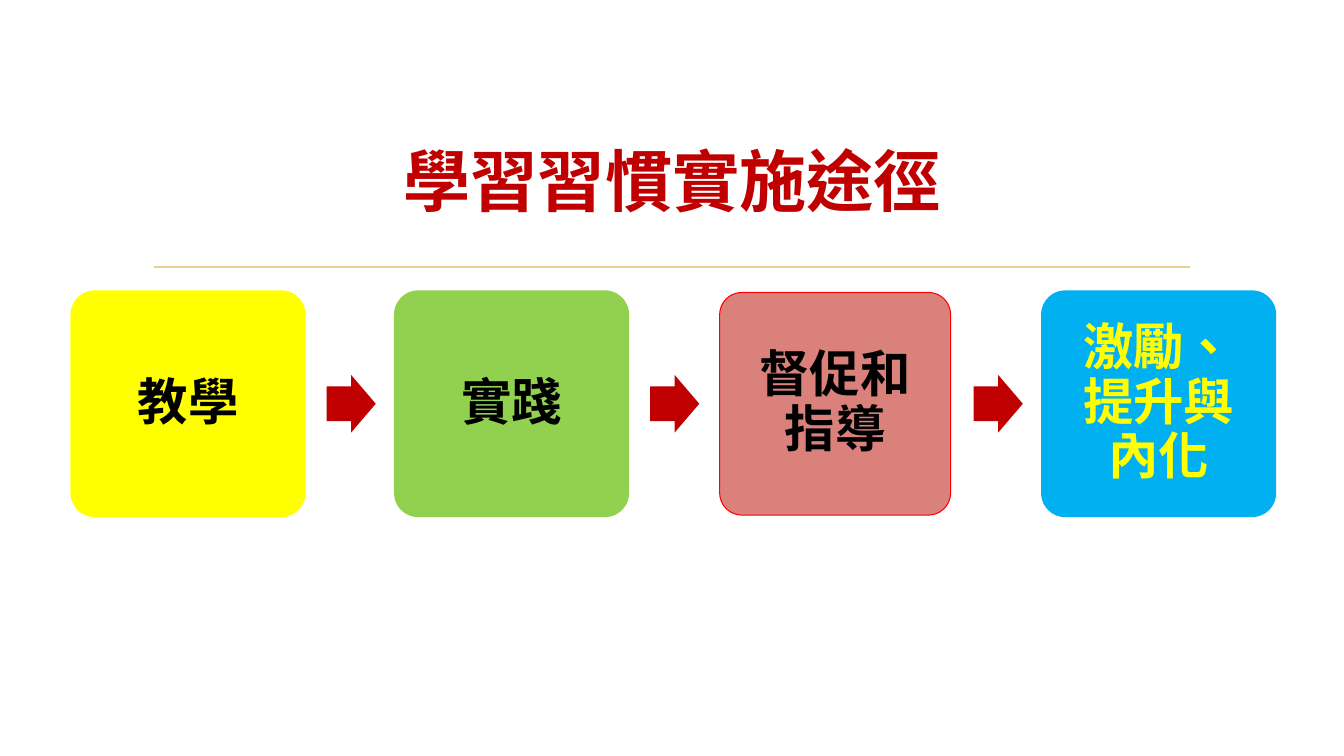
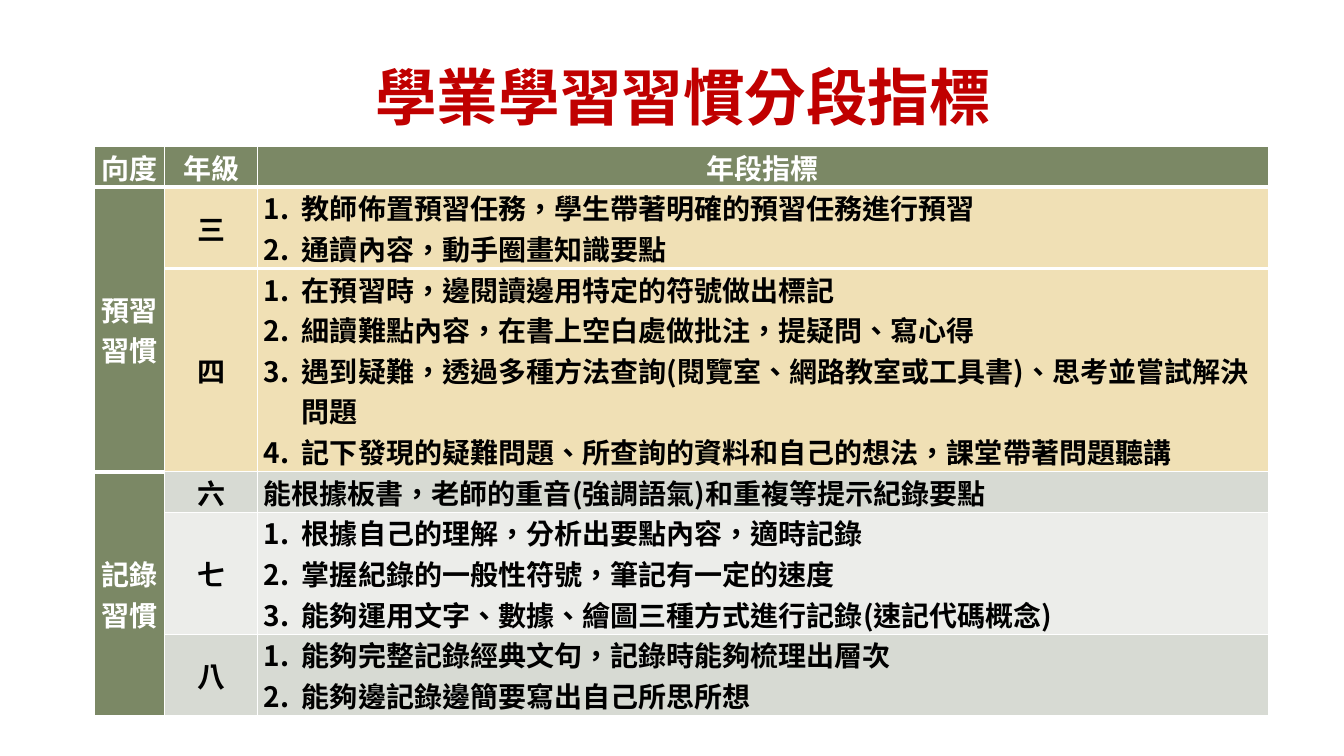
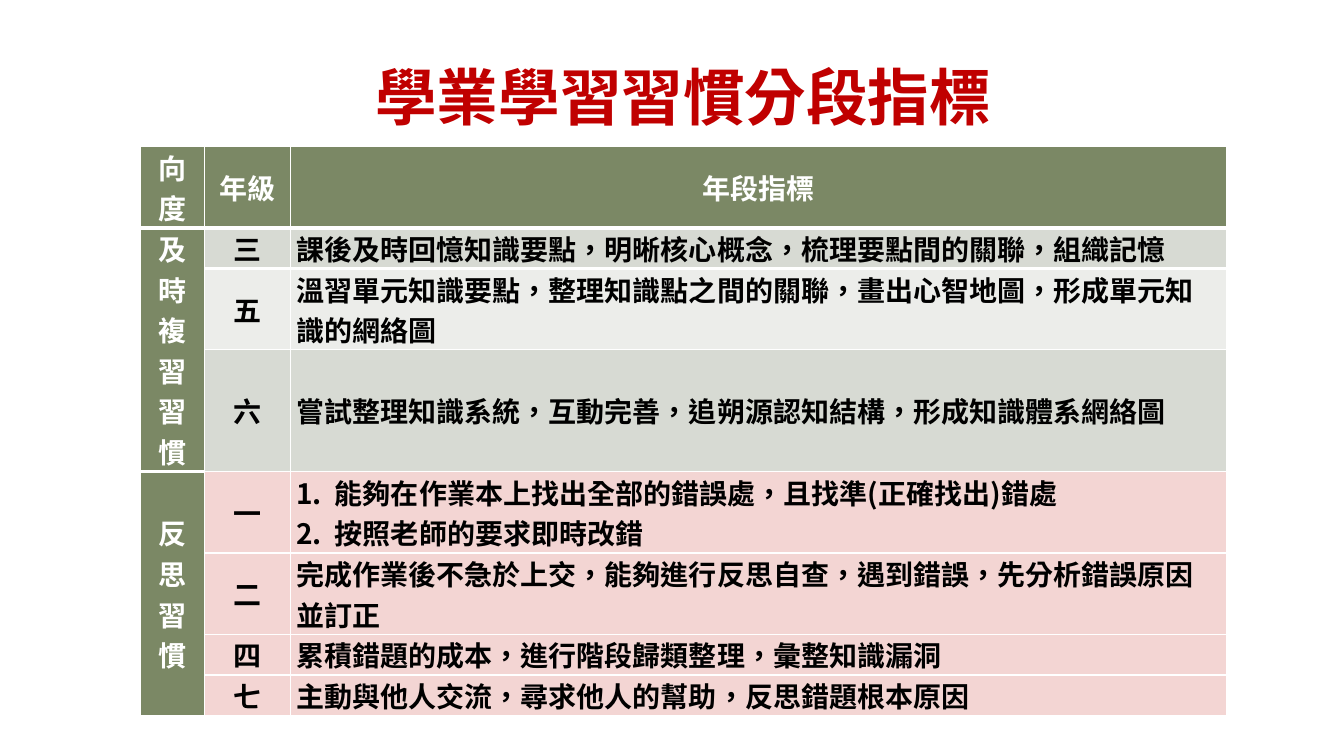
from dataclasses import dataclass

from lxml.etree import SubElement as Sub
from pptx import Presentation
from pptx.dml.color import RGBColor as RGB
from pptx.enum.shapes import MSO_CONNECTOR as Link, MSO_SHAPE as Kind
from pptx.enum.text import MSO_ANCHOR as Anchor, MSO_AUTO_SIZE as Fit, PP_ALIGN as Align
from pptx.oxml.ns import qn
from pptx.util import Cm, Pt


@dataclass(frozen=True)
class Theme:
    red: str = "C00000"
    gold: str = "E8D191"
    black: str = "000000"
    white: str = "FFFFFF"
    yellow: str = "FFFF00"
    lime: str = "92D050"
    rose: str = "DB817B"
    edge: str = "FF0000"
    blue: str = "00B0F0"
    olive: str = "7B8865"
    sand: str = "F0E0B5"
    gray: str = "D7DAD3"
    pale: str = "ECEDEA"
    pink: str = "F3D5D3"
    serif: str = "Times New Roman"
    sans: str = "Noto Sans CJK SC"
    big: int = 48
    head: int = 44
    step: int = 36
    cell: int = 20


T = Theme()

STEPS = [
    ("教學", T.yellow, T.yellow, 3, T.black),
    ("實踐", T.lime, T.lime, 3, T.black),
    ("督促和指導", T.rose, T.edge, 0.75, T.black),
    ("激勵、提升與內化", T.blue, T.blue, 3, T.yellow),
]

HEADS = ["向度", "年級", "年段指標"]

STUDY = [
    ("預習習慣", [
        ("三", T.sand, 2, [
            "教師佈置預習任務，學生帶著明確的預習任務進行預習",
            "通讀內容，動手圈畫知識要點"]),
        ("四", T.sand, 5, [
            "在預習時，邊閱讀邊用特定的符號做出標記",
            "細讀難點內容，在書上空白處做批注，提疑問、寫心得",
            "遇到疑難，透過多種方法查詢(閱覽室、網路教室或工具書)、思考並嘗試解決問題",
            "記下發現的疑難問題、所查詢的資料和自己的想法，課堂帶著問題聽講"]),
    ]),
    ("記錄習慣", [
        ("六", T.gray, 1, ["能根據板書，老師的重音(強調語氣)和重複等提示紀錄要點"]),
        ("七", T.pale, 3, [
            "根據自己的理解，分析出要點內容，適時記錄",
            "掌握紀錄的一般性符號，筆記有一定的速度",
            "能夠運用文字、數據、繪圖三種方式進行記錄(速記代碼概念)"]),
        ("八", T.gray, 2, [
            "能夠完整記錄經典文句，記錄時能夠梳理出層次",
            "能夠邊記錄邊簡要寫出自己所思所想"]),
    ]),
]

REVIEW = [
    ("及時複習習慣", [
        ("三", T.gray, 1, ["課後及時回憶知識要點，明晰核心概念，梳理要點間的關聯，組織記憶"]),
        ("五", T.pale, 2, ["溫習單元知識要點，整理知識點之間的關聯，畫出心智地圖，形成單元知識的網絡圖"]),
        ("六", T.gray, 3, ["嘗試整理知識系統，互動完善，追朔源認知結構，形成知識體系網絡圖"]),
    ]),
    ("反思習慣", [
        ("一", T.pink, 2, [
            "能夠在作業本上找出全部的錯誤處，且找準(正確找出)錯處",
            "按照老師的要求即時改錯"]),
        ("二", T.pink, 2, ["完成作業後不急於上交，能夠進行反思自查，遇到錯誤，先分析錯誤原因並訂正"]),
        ("四", T.pink, 1, ["累積錯題的成本，進行階段歸類整理，彙整知識漏洞"]),
        ("七", T.pink, 1, ["主動與他人交流，尋求他人的幫助，反思錯題根本原因"]),
    ]),
]


def style(para, size, color, face=T.sans, align=Align.CENTER):
    para.alignment = align
    font = para.font
    font.size, font.bold, font.name = Pt(size), True, face
    font.color.rgb = RGB.from_string(color)
    props = para._p.pPr.find(qn("a:defRPr"))
    props.set("lang", "zh-TW")
    Sub(props, qn("a:ea")).set("typeface", T.sans)


def paint(shape, fill, edge=None, width=0):
    shape.shadow.inherit = False
    shape.fill.solid()
    shape.fill.fore_color.rgb = RGB.from_string(fill)
    if edge:
        shape.line.color.rgb = RGB.from_string(edge)
        shape.line.width = Pt(width)
    else:
        shape.line.fill.background()


def place(shape, left, top, width, height):
    shape.left, shape.top, shape.width, shape.height = map(Cm, (left, top, width, height))


def add_rule(slide, layout):
    rule = slide.shapes.add_connector(Link.STRAIGHT, Cm(3.89), Cm(6.73), Cm(30), Cm(6.73))
    rule.line.color.rgb = RGB.from_string(T.gold)
    rule.line.width = Pt(1.25)
    Sub(rule.element.spPr, qn("a:effectLst"))
    layout.shapes.element.append(rule.element)


def add_title(slide, text, size, box=None):
    title = slide.shapes.title
    if box:
        place(title, *box)
    frame = title.text_frame
    frame.text = text
    frame.auto_size = Fit.NONE
    frame.vertical_anchor = Anchor.MIDDLE
    style(frame.paragraphs[0], size, T.red, T.serif)


def add_flow(slide, left, top, width, height):
    side, wide, tall, lead = 5.82, 1.24, 1.45, 0.58
    pitch = (width - side) / (len(STEPS) - 1)
    for i, (text, fill, edge, line, color) in enumerate(STEPS):
        x = left + i * pitch
        card = slide.shapes.add_shape(Kind.ROUNDED_RECTANGLE, Cm(x), Cm(top), Cm(side), Cm(height))
        card.adjustments[0] = 0.1
        paint(card, fill, edge, line)
        frame = card.text_frame
        frame.word_wrap = True
        frame.vertical_anchor = Anchor.MIDDLE
        frame.margin_left = frame.margin_right = Cm(0.54)
        frame.text = text
        para = frame.paragraphs[0]
        para.line_spacing = 0.9
        style(para, T.step, color)
        if i:
            arrow = slide.shapes.add_shape(
                Kind.RIGHT_ARROW, Cm(x - pitch + side + lead),
                Cm(top + (height - tall) / 2), Cm(wide), Cm(tall))
            arrow.adjustments[0], arrow.adjustments[1] = 0.6, 0.5
            paint(arrow, T.red)


def number(para):
    props = para._p.get_or_add_pPr()
    props.set("marL", str(Cm(0.97)))
    props.set("indent", str(-Cm(0.97)))
    Sub(props, qn("a:buFont")).set("typeface", "+mj-lt")
    Sub(props, qn("a:buAutoNum")).set("type", "arabicPeriod")


def add_edge(cell, side):
    props = cell._tc.get_or_add_tcPr()
    edge = Sub(props, qn(side))
    edge.set("w", str(Pt(3)))
    Sub(Sub(edge, qn("a:solidFill")), qn("a:srgbClr")).set("val", T.white)
    props.insert(0, edge)


def fill_cell(cell, lines, fill, color=T.black, align=Align.CENTER):
    cell.fill.solid()
    cell.fill.fore_color.rgb = RGB.from_string(fill)
    cell.margin_left = cell.margin_right = Cm(0.15)
    cell.margin_top = cell.margin_bottom = 0
    cell.vertical_anchor = Anchor.MIDDLE
    cell.text_frame.text = "\n".join(lines)
    for para in cell.text_frame.paragraphs:
        if len(lines) > 1:
            number(para)
        style(para, T.cell, color, align=align)


def add_grid(slide, groups, left, top, widths, first):
    pitch = 1.02
    counts = [first] + [row[2] for _, rows in groups for row in rows]
    grid = slide.shapes.add_table(
        len(counts), len(widths), Cm(left), Cm(top),
        Cm(sum(widths)), Cm(pitch * sum(counts))).table
    for col, width in zip(grid.columns, widths):
        col.width = Cm(width)
    for row, count in zip(grid.rows, counts):
        row.height = Cm(pitch * count)
    for c, text in enumerate(HEADS):
        fill_cell(grid.cell(0, c), [text], T.olive, T.white)
    r = 1
    for name, rows in groups:
        grid.cell(r, 0).merge(grid.cell(r + len(rows) - 1, 0))
        fill_cell(grid.cell(r, 0), [name], T.olive, T.white)
        for grade, fill, _, lines in rows:
            fill_cell(grid.cell(r, 1), [grade], fill)
            fill_cell(grid.cell(r, 2), lines, fill, align=Align.LEFT)
            r += 1
    for c in range(len(HEADS)):
        add_edge(grid.cell(0, c), "a:lnB")
        add_edge(grid.cell(1, c), "a:lnT")


def main():
    deck = Presentation()
    deck.slide_width, deck.slide_height = Cm(33.87), Cm(19.05)
    layout = deck.slide_layouts[5]
    place(layout.placeholders[0], 3.89, 1.35, 26.67, 2.13)

    slide = deck.slides.add_slide(layout)
    add_rule(slide, layout)
    add_title(slide, "學習習慣實施途徑", T.big, (3.61, 2.72, 26.67, 3.63))
    add_flow(slide, 1.83, 7.37, 30.28, 5.61)

    for groups, left, widths, first in (
            (STUDY, 2.39, (1.76, 2.34, 25.47), 1),
            (REVIEW, 3.53, (1.63, 2.16, 23.6), 2)):
        slide = deck.slides.add_slide(layout)
        add_title(slide, "學業學習習慣分段指標", T.head)
        add_grid(slide, groups, left, 3.69, widths, first)

    deck.save("out.pptx")


if __name__ == "__main__":
    main()
